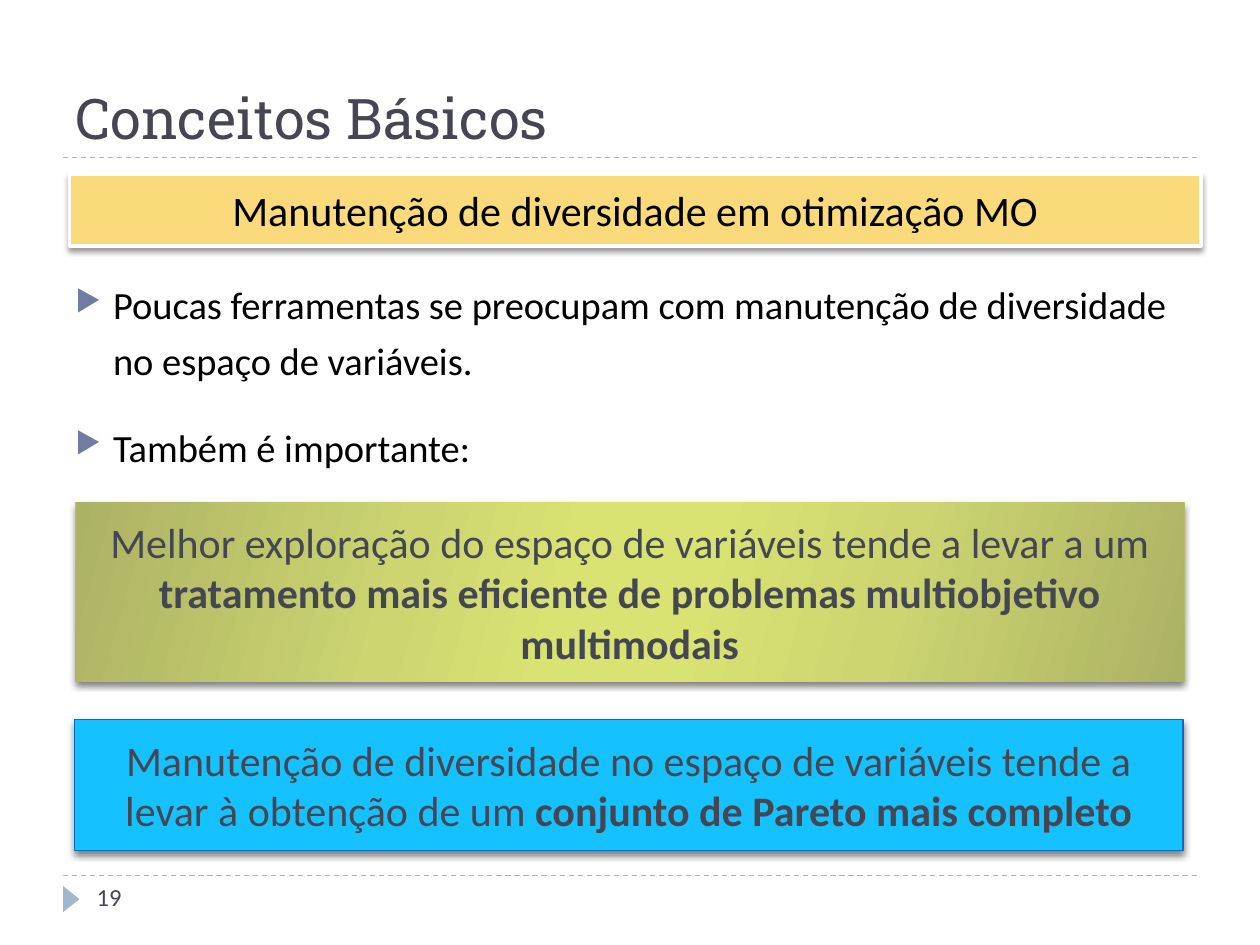
from lxml import etree
from pptx import Presentation
from pptx.dml.color import RGBColor
from pptx.enum.dml import MSO_LINE
from pptx.enum.shapes import MSO_CONNECTOR, MSO_SHAPE
from pptx.enum.text import MSO_ANCHOR, PP_ALIGN
from pptx.oxml import parse_xml
from pptx.oxml.ns import nsdecls, qn
from pptx.util import Cm, Pt

INK = RGBColor(0x46, 0x46, 0x53)
BLACK = RGBColor(0x00, 0x00, 0x00)
WHITE = RGBColor(0xFF, 0xFF, 0xFF)
MIST = RGBColor(0x9F, 0xB8, 0xCD)
VIOLET = RGBColor(0x72, 0x7C, 0xA3)
YELLOW = RGBColor(0xFA, 0xDA, 0x7A)
SKY = RGBColor(0x15, 0xC2, 0xFF)
BLUE = RGBColor(0x00, 0x70, 0xC0)
OLIVE = RGBColor(0xAC, 0xB2, 0x64)
MOSS = RGBColor(0xCC, 0xD5, 0x70)
LIME = RGBColor(0xD9, 0xE3, 0x71)
OLIVE_STOPS = [(0, OLIVE), (30, MOSS), (45, LIME), (55, LIME), (73, MOSS), (100, OLIVE)]

RULE_LEFT, RULE_WIDTH = Cm(1.27), Cm(22.86)


def style(paragraph, size, color, name="Calibri"):
    font = paragraph.font
    font.size, font.name = Pt(size), name
    font.color.rgb = color


def add_text(slide, box, anchor=MSO_ANCHOR.TOP):
    frame = slide.shapes.add_textbox(*box).text_frame
    frame.word_wrap = True
    frame.vertical_anchor = anchor
    return frame


def add_rule(slide, left, top, width):
    rule = slide.shapes.add_connector(MSO_CONNECTOR.STRAIGHT, left, top, left + width, top)
    rule.line.color.rgb = MIST
    rule.line.width = Pt(0.75)
    rule.line.dash_style = MSO_LINE.DASH
    etree.SubElement(rule._element.spPr, qn("a:effectLst"))


def drop_shadow(shape, alpha, blur, distance):
    shape.shadow.inherit = False
    effects = shape._element.spPr.find(qn("a:effectLst"))
    effects.append(parse_xml(
        f'<a:outerShdw {nsdecls("a")} blurRad="{Pt(blur)}" dist="{Pt(distance)}" '
        f'dir="5400000" rotWithShape="0"><a:srgbClr val="000000">'
        f'<a:alpha val="{alpha * 1000}"/></a:srgbClr></a:outerShdw>'))


def fill_gradient(shape, stops, angle):
    shape.fill.gradient()
    gradient = shape._element.spPr.find(qn("a:gradFill"))
    stop_list = gradient.find(qn("a:gsLst"))
    for old in list(stop_list):
        stop_list.remove(old)
    for position, color in stops:
        stop = etree.SubElement(stop_list, qn("a:gs"), pos=str(position * 1000))
        etree.SubElement(stop, qn("a:srgbClr"), val=str(color))
    gradient.find(qn("a:lin")).set("ang", str(angle * 60000))


def add_heading(slide, left, top, width, height):
    paragraph = add_text(slide, (left, top, width, height), MSO_ANCHOR.BOTTOM).paragraphs[0]
    paragraph.text = "Conceitos Básicos"
    style(paragraph, 32, INK, "Roboto Slab")
    add_rule(slide, left, top + height, width)


def add_bullets(slide, box, items):
    frame = add_text(slide, box)
    for index, item in enumerate(items):
        paragraph = frame.paragraphs[0] if index == 0 else frame.add_paragraph()
        paragraph.text = item
        paragraph.line_spacing = 1.2
        paragraph.space_after = Pt(6)
        if index:
            paragraph.space_before = Pt(12)
        props = paragraph._p.get_or_add_pPr()
        props.set("marL", str(Cm(0.76)))
        props.set("indent", str(-Cm(0.76)))
        color = etree.SubElement(props, qn("a:buClr"))
        etree.SubElement(color, qn("a:srgbClr"), val=str(VIOLET))
        etree.SubElement(props, qn("a:buSzPct"), val="76000")
        etree.SubElement(props, qn("a:buChar"), char="▶")
        style(paragraph, 22, BLACK)


def add_banner(slide, box, plain, strong="", color=INK, shadow=(50, 4, 2)):
    """Shadowed rectangle with centred text that may end in bold."""
    banner = slide.shapes.add_shape(MSO_SHAPE.RECTANGLE, *box)
    banner.line.fill.background()
    drop_shadow(banner, *shadow)
    frame = banner.text_frame
    frame.word_wrap = True
    frame.vertical_anchor = MSO_ANCHOR.MIDDLE
    paragraph = frame.paragraphs[0]
    paragraph.alignment = PP_ALIGN.CENTER
    paragraph.add_run().text = plain
    if strong:
        bold_run = paragraph.add_run()
        bold_run.text = strong
        bold_run.font.bold = True
    style(paragraph, 24, color)
    return banner


def outline(shape, color, width):
    shape.line.color.rgb = color
    shape.line.width = Pt(width)


def add_footer(slide, left, top, width):
    add_rule(slide, left, top, width)
    marker = slide.shapes.add_shape(
        MSO_SHAPE.ISOSCELES_TRIANGLE, left - Cm(0.1), top + Cm(0.31), Cm(0.53), Cm(0.33))
    marker.rotation = 90
    marker.shadow.inherit = False
    marker.fill.solid()
    marker.fill.fore_color.rgb = MIST
    marker.line.fill.background()
    number = add_text(slide, (left + Cm(0.43), top, Cm(5.51), Cm(1.02))).paragraphs[0]
    number.text = "19"
    style(number, 14, INK)


def main():
    deck = Presentation()
    deck.slide_width, deck.slide_height = Cm(25.4), Cm(19.05)
    slide = deck.slides.add_slide(deck.slide_layouts[6])

    # Frame: heading and footer
    add_footer(slide, RULE_LEFT, Cm(17.65), RULE_WIDTH)
    add_heading(slide, RULE_LEFT, Cm(0.43), RULE_WIDTH, Cm(2.74))

    # Bulleted body
    add_bullets(slide, (RULE_LEFT, Cm(5.36), RULE_WIDTH, Cm(4.37)), [
        "Poucas ferramentas se preocupam com manutenção de diversidade no espaço de variáveis.",
        "Também é importante:",
    ])

    # Topic banner
    topic = add_banner(slide, (Cm(1.4), Cm(3.51), Cm(22.81), Cm(1.45)),
                       "Manutenção de diversidade em otimização MO",
                       color=BLACK, shadow=(40, 3, 2))
    topic.fill.solid()
    topic.fill.fore_color.rgb = YELLOW
    outline(topic, WHITE, 2)

    # Conclusions
    exploration = add_banner(slide, (Cm(1.52), Cm(10.13), Cm(22.35), Cm(3.61)),
                             "Melhor exploração do espaço de variáveis tende a levar a um ",
                             "tratamento mais eficiente de problemas multiobjetivo multimodais")
    fill_gradient(exploration, OLIVE_STOPS, 16)

    diversity = add_banner(slide, (Cm(1.5), Cm(14.5), Cm(22.35), Cm(2.64)),
                           "Manutenção de diversidade no espaço de variáveis tende a levar "
                           "à obtenção de um ",
                           "conjunto de Pareto mais completo")
    diversity.fill.solid()
    diversity.fill.fore_color.rgb = SKY
    outline(diversity, BLUE, 0.75)

    deck.save("out.pptx")


if __name__ == "__main__":
    main()
